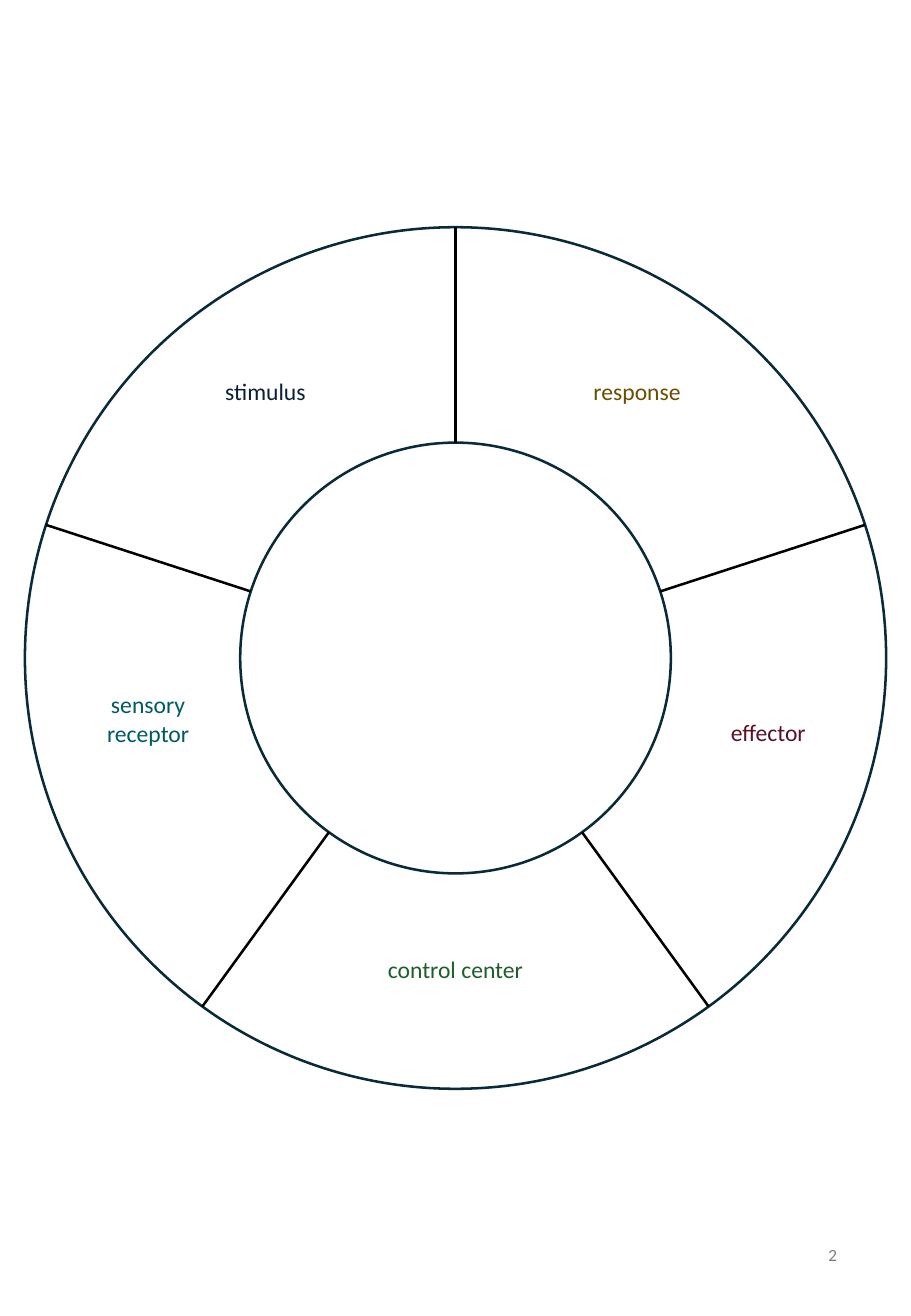
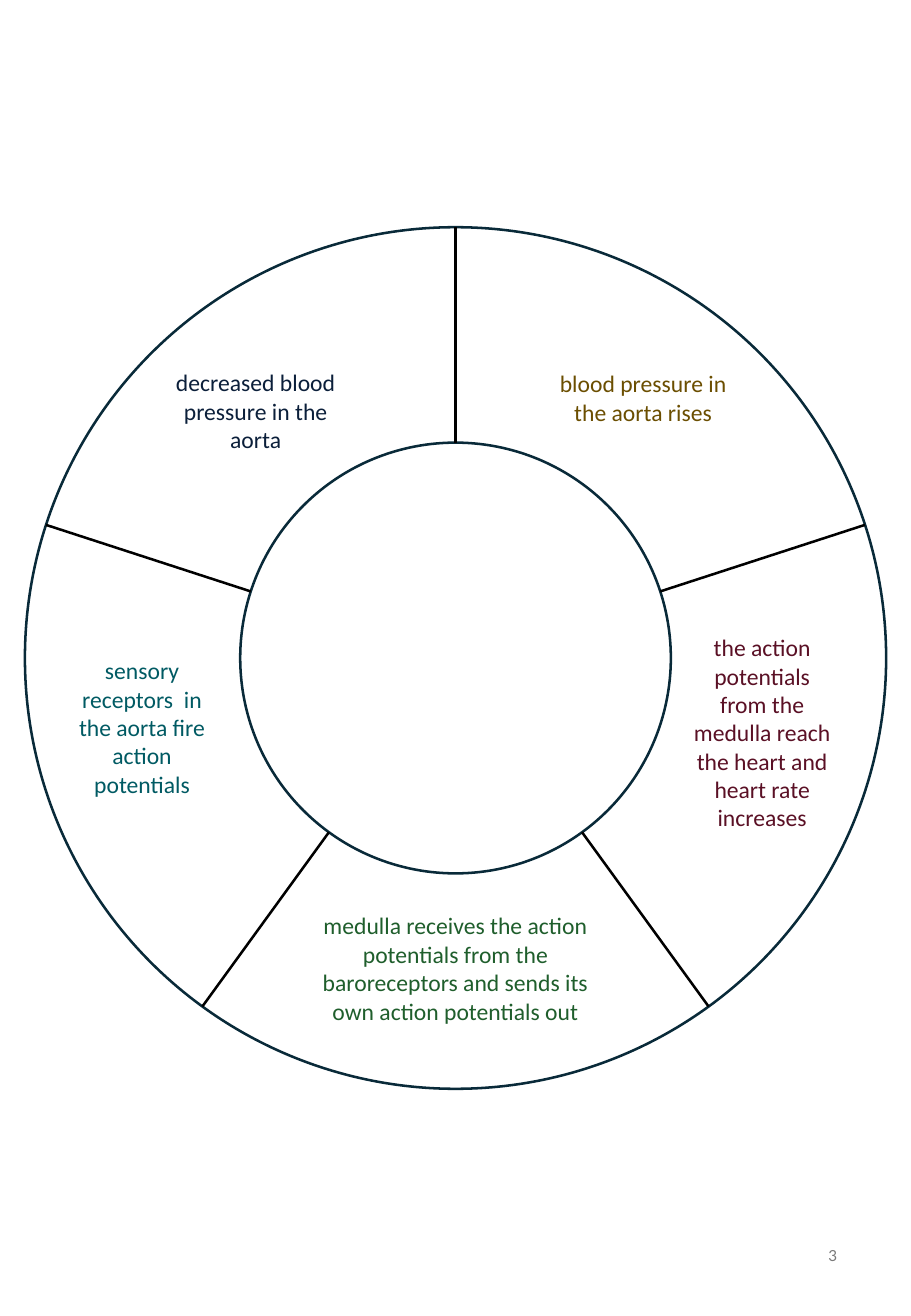
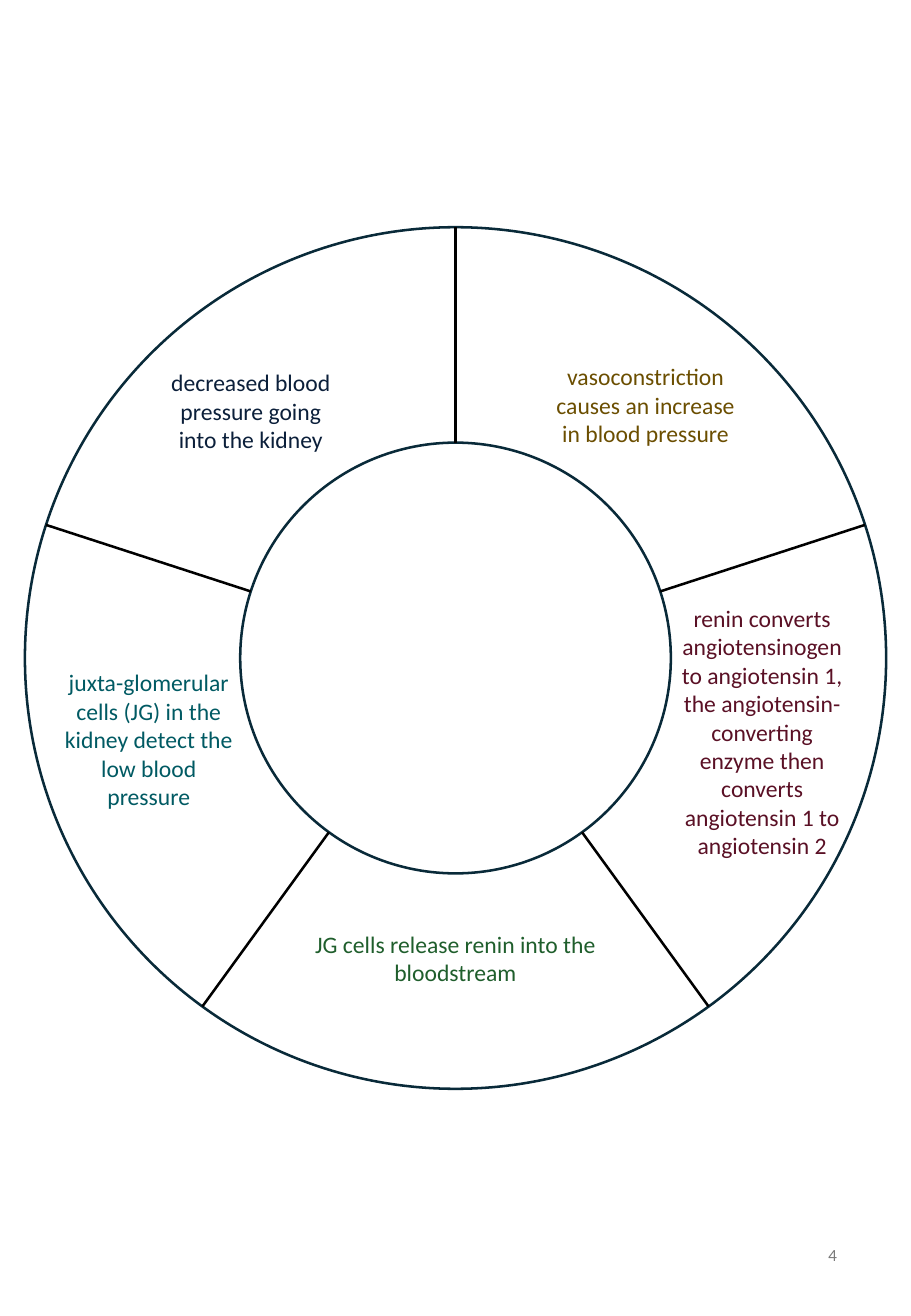
"""Build three feedback-loop wheels: the stages, then two blood pressure examples."""
import math
from dataclasses import dataclass

import pptx
import pptx.dml.color
import pptx.enum.shapes
import pptx.enum.text
import pptx.oxml
import pptx.util


@dataclass(frozen=True)
class Theme:
    ring: str = "092A39"
    divider: str = "000000"
    number: str = "797979"
    stages: tuple = ("0B1F3A", "005A63", "1F5E2C", "5A1025", "6B4E00")
    stage_font: str = "Calibri"
    number_font: str = "Lato"
    stage_size: float = 14
    number_size: float = 9
    line_width: float = 1.5


theme = Theme()
ALIGN = pptx.enum.text.PP_ALIGN
ANCHOR = pptx.enum.text.MSO_ANCHOR

deck = pptx.Presentation()
deck.slide_width = pptx.util.Inches(7.5)
deck.slide_height = pptx.util.Inches(10.83)
column = deck.slide_width / 75
row = deck.slide_height / 108.3

center_x, center_y = 37.5, 54.15
outer_radius = 35.45
hole_share = 0.25
inner_radius = outer_radius * (1 - 2 * hole_share)
sector_angle = 2 * math.pi / len(theme.stages)
first_number = 2

loops = [
    [
        ("stimulus", 13.4, 30.2, 16.9, 1),
        ("sensory receptor", 5.2, 56, 14, 2),
        ("control center", 24.7, 77.8, 25.6, 1),
        ("effector", 56.7, 58.3, 13.1, 1),
        ("response", 44, 30.2, 16.9, 1),
    ],
    [
        ("decreased blood pressure in the aorta", 12.6, 29.5, 16.9, 3),
        ("sensory receptors  in the aorta fire action potentials", 4.7, 53.2, 14, 5),
        ("medulla receives the action potentials from the baroreceptors "
         "and sends its own action potentials out", 24.7, 74.2, 25.6, 4),
        ("the action potentials from the medulla reach the heart "
         "and heart rate increases", 56.2, 51.3, 13.1, 7),
        ("blood pressure in the aorta rises", 44.5, 29.6, 16.9, 2),
    ],
    [
        ("decreased blood pressure going into the kidney", 12.9, 29.5, 15.5, 3),
        ("juxta-glomerular cells (JG) in the kidney detect the low blood pressure",
         4.5, 54.2, 15.5, 5),
        ("JG cells release renin into the bloodstream", 24.7, 75.7, 25.6, 2),
        ("renin converts angiotensinogen to angiotensin 1, the angiotensin-converting "
         "enzyme then converts angiotensin 1 to angiotensin 2", 55, 48.9, 15.5, 9),
        ("vasoconstriction causes an increase in blood pressure", 44.7, 29, 16.9, 3),
    ],
]


def cells(left, top, width, height):
    return (round(left * column), round(top * row),
            round(width * column), round(height * row))


def add_label(slide, wording, box, font_name, size, color, align):
    frame = slide.shapes.add_textbox(*cells(*box)).text_frame
    frame.word_wrap = True
    paragraph = frame.paragraphs[0]
    paragraph.text = wording
    paragraph.alignment = align
    paragraph.font.name = font_name
    paragraph.font.size = pptx.util.Pt(size)
    paragraph.font.color.rgb = pptx.dml.color.RGBColor.from_string(color)
    return frame


for number, stages in enumerate(loops, first_number):
    slide = deck.slides.add_slide(deck.slide_layouts[6])
    wheel = slide.shapes.add_group_shape().shapes

    ring = wheel.add_shape(
        pptx.enum.shapes.MSO_SHAPE.DONUT,
        *cells(center_x - outer_radius, center_y - outer_radius,
               2 * outer_radius, 2 * outer_radius))
    ring.adjustments[0] = hole_share
    ring.shadow.inherit = False
    ring.fill.background()
    ring.line.color.rgb = pptx.dml.color.RGBColor.from_string(theme.ring)
    ring.line.width = pptx.util.Pt(theme.line_width)

    for sector in range(len(stages)):
        across = math.sin(sector * sector_angle)
        down = -math.cos(sector * sector_angle)
        start_x, start_y, end_x, end_y = cells(
            center_x + outer_radius * across, center_y + outer_radius * down,
            center_x + inner_radius * across, center_y + inner_radius * down)
        divider = wheel.add_connector(
            pptx.enum.shapes.MSO_CONNECTOR.STRAIGHT, start_x, start_y, end_x, end_y)
        divider.line.color.rgb = pptx.dml.color.RGBColor.from_string(theme.divider)
        divider.line.width = pptx.util.Pt(theme.line_width)
        divider.element.spPr.append(pptx.oxml.parse_xml(
            '<a:effectLst xmlns:a="http://schemas.openxmlformats.org/drawingml/2006/main"/>'))

    for (wording, left, top, width, lines), color in zip(stages, theme.stages):
        stage = add_label(slide, wording, (left, top, width, 1.55 + 2.36 * lines),
                          theme.stage_font, theme.stage_size, color, ALIGN.CENTER)
        stage.auto_size = pptx.enum.text.MSO_AUTO_SIZE.SHAPE_TO_FIT_TEXT
        stage.margin_left = stage.margin_right = round(0.8 * column)
        stage.margin_top = stage.margin_bottom = round(0.8 * row)

    page = add_label(slide, str(number), (53, 100.4, 16.9, 5.8),
                     theme.number_font, theme.number_size, theme.number, ALIGN.RIGHT)
    page.vertical_anchor = ANCHOR.MIDDLE

deck.save("out.pptx")
